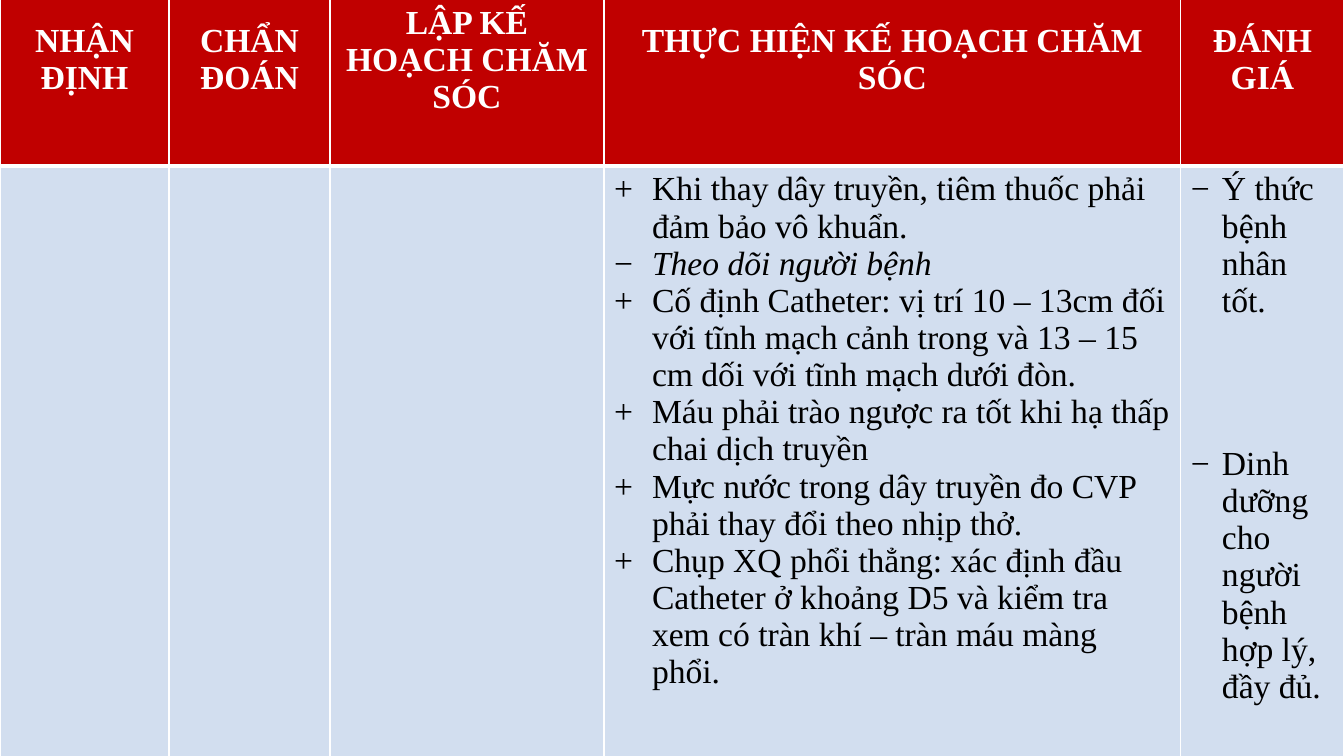
"""Build the nursing care plan table slide."""
from dataclasses import dataclass

from lxml import etree
from pptx import Presentation
from pptx import util as u
from pptx.dml.color import RGBColor
from pptx.enum import text
from pptx.oxml import ns

PX = 914400 / 100.8


@dataclass(frozen=True)
class Theme:
    font: str = "Times New Roman"
    size: int = 24
    head: str = "C00000"
    body: str = "D2DEEF"
    light: str = "FFFFFF"
    dark: str = "000000"
    thin: int = 1
    thick: int = 3


@dataclass(frozen=True)
class Item:
    words: str
    mark: str = "+"
    slant: bool = False


@dataclass(frozen=True)
class Column:
    title: str
    width: int
    items: tuple[Item, ...] = ()
    indent: int = 0
    after: int = 0


THEME = Theme()
TOP = -46
ROWS = (212, 670)
PLAN = (
    Column("NHẬN ĐỊNH", 169),
    Column("CHẨN ĐOÁN", 161),
    Column("LẬP KẾ HOẠCH CHĂM SÓC", 274),
    Column("THỰC HIỆN KẾ HOẠCH CHĂM SÓC", 577, (
        Item("Khi thay dây truyền, tiêm thuốc phải đảm bảo vô khuẩn."),
        Item("Theo dõi người bệnh", "−", True),
        Item("Cố định Catheter: vị trí 10 – 13cm đối với tĩnh mạch cảnh trong "
             "và 13 – 15 cm dối với tĩnh mạch dưới đòn."),
        Item("Máu phải trào ngược ra tốt khi hạ thấp chai dịch truyền"),
        Item("Mực nước trong dây truyền đo CVP phải thay đổi theo nhịp thở."),
        Item("Chụp XQ phổi thẳng: xác định đầu Catheter ở khoảng D5 và kiểm tra "
             "xem có tràn khí – tràn máu màng phổi."),
    ), 38),
    Column("ĐÁNH GIÁ", 163, (
        Item("Ý thức bệnh nhân tốt.", "−"),
        Item("Dinh dưỡng cho người bệnh hợp lý, đầy đủ.", "−"),
    ), 31, 90),
)


def px(count: int) -> u.Emu:
    """Turn px into EMU."""
    return u.Emu(round(count * PX))


def write(para, words: str, color: str, **extra) -> None:
    """Add one formatted run to a paragraph."""
    run = para.add_run()
    run.text = words
    form = {"name": THEME.font, "size": u.Pt(THEME.size), **extra}
    for key, value in form.items():
        setattr(run.font, key, value)
    run.font.color.rgb = RGBColor.from_string(color)


def paint(cell, color: str, top: int, base: int) -> None:
    """Fill a cell and draw its four borders."""
    cell.fill.solid()
    cell.fill.fore_color.rgb = RGBColor.from_string(color)
    props = cell._tc.get_or_add_tcPr()
    sides = {"L": THEME.thin, "R": THEME.thin, "T": top, "B": base}
    for spot, (side, width) in enumerate(sides.items()):
        line = etree.Element(ns.qn(f"a:ln{side}"), w=str(u.Pt(width)))
        fill = etree.SubElement(line, ns.qn("a:solidFill"))
        etree.SubElement(fill, ns.qn("a:srgbClr"), val=THEME.light)
        props.insert(spot, line)


def bullet(para, mark: str, indent: int) -> None:
    """Give a paragraph a hanging bullet."""
    props = para._p.get_or_add_pPr()
    props.set("marL", str(px(indent)))
    props.set("indent", str(-px(indent)))
    etree.SubElement(props, ns.qn("a:buFont"), typeface=THEME.font)
    etree.SubElement(props, ns.qn("a:buChar"), char=mark)


def title(cell, words: str) -> None:
    """Draw a heading cell."""
    paint(cell, THEME.head, THEME.thin, THEME.thick)
    cell.vertical_anchor = text.MSO_ANCHOR.MIDDLE
    para = cell.text_frame.paragraphs[0]
    para.alignment = text.PP_ALIGN.CENTER
    write(para, words, THEME.light, bold=True)


def fill(cell, column: Column) -> None:
    """Draw a body cell with its list."""
    paint(cell, THEME.body, THEME.thick, THEME.thin)
    frame = cell.text_frame
    for spot, item in enumerate(column.items):
        para = frame.add_paragraph() if spot else frame.paragraphs[0]
        para.space_after = u.Pt(column.after)
        bullet(para, item.mark, column.indent)
        write(para, item.words, THEME.dark, bold=False, italic=item.slant)


def main() -> None:
    """Build and save the deck."""
    deck = Presentation()
    deck.slide_width, deck.slide_height = px(1344), px(756)
    slide = deck.slides.add_slide(deck.slide_layouts[6])
    width = sum(column.width for column in PLAN)
    table = slide.shapes.add_table(
        len(ROWS), len(PLAN), 0, px(TOP), px(width), px(sum(ROWS))).table
    table.horz_banding = False
    for row, height in zip(table.rows, ROWS):
        row.height = px(height)
    for spot, column in enumerate(PLAN):
        table.columns[spot].width = px(column.width)
        title(table.cell(0, spot), column.title)
        fill(table.cell(1, spot), column)
    deck.save("out.pptx")


if __name__ == "__main__":
    main()
